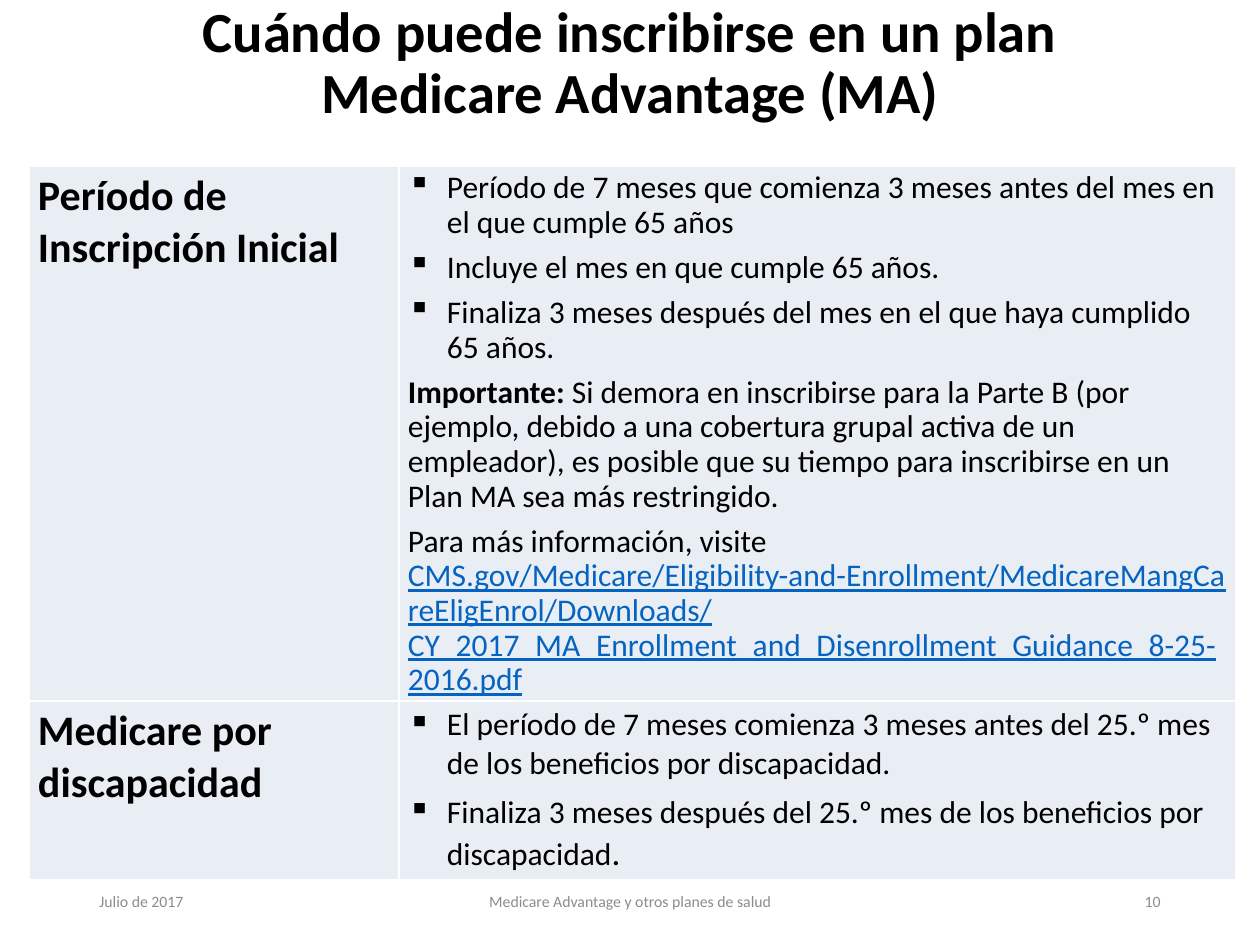
from pptx import Presentation
from pptx import util as u
from pptx.dml.color import RGBColor
from pptx.enum import text
from pptx.oxml.ns import qn
from lxml import etree

BLACK = RGBColor(0x00, 0x00, 0x00)
WHITE = RGBColor(0xFF, 0xFF, 0xFF)
GRAY = RGBColor(0x8C, 0x8C, 0x8C)
LINK = RGBColor(0x05, 0x63, 0xC1)
CELL = RGBColor(0xE9, 0xED, 0xF4)
FONT = "Calibri"
LEFT, CENTER, RIGHT = text.PP_ALIGN.LEFT, text.PP_ALIGN.CENTER, text.PP_ALIGN.RIGHT


def px(n):
    return u.Emu(round(n * 914400 / 126))


def add_run(p, content, size=18, color=BLACK, bold=False, underline=False):
    r = p.add_run()
    r.text = content
    f = r.font
    f.name, f.size, f.bold, f.underline = FONT, u.Pt(size), bold, underline
    f.color.rgb = color


def add_bullet(p, char="▪", indent=39):
    pPr = p._p.get_or_add_pPr()
    pPr.set("marL", str(px(indent)))
    pPr.set("indent", str(-px(indent)))
    etree.SubElement(pPr, qn("a:buChar")).set("char", char)


def fill_paragraph(p, lines, align=LEFT, spacing=1.0, before=0, bullet=False, **fmt):
    p.alignment, p.line_spacing, p.space_before = align, spacing, u.Pt(before)
    if bullet:
        add_bullet(p)
    for i, line in enumerate(lines):
        if i:
            p.add_line_break()
        for content, extra in line:
            add_run(p, content, **{**fmt, **extra})


class Deck:
    def __init__(self, width, height):
        self.prs = Presentation()
        self.prs.slide_width, self.prs.slide_height = px(width), px(height)
        self.s = self.prs.slides.add_slide(self.prs.slide_layouts[6])

    def textbox(self, x, y, w, h, *lines, **fmt):
        tf = self.s.shapes.add_textbox(px(x), px(y), px(w), px(h)).text_frame
        tf.word_wrap = True
        tf.vertical_anchor = text.MSO_ANCHOR.MIDDLE
        fill_paragraph(tf.paragraphs[0], [[(line, {})] for line in lines], **fmt)

    def table(self, x, y, cols, rows, cells):
        shape = self.s.shapes.add_table(len(rows), len(cols), px(x), px(y),
                                        px(sum(cols)), px(sum(rows)))
        tbl = shape.table
        tbl.first_row = tbl.horz_banding = False
        for col, w in zip(tbl.columns, cols):
            col.width = px(w)
        for row, h in zip(tbl.rows, rows):
            row.height = px(h)
        for i, row in enumerate(cells):
            for j, paragraphs in enumerate(row):
                self.cell(tbl.cell(i, j), paragraphs)

    def cell(self, cell, paragraphs):
        cell.margin_left = cell.margin_right = px(9)
        cell.margin_top = cell.margin_bottom = px(5)
        self.borders(cell)
        cell.fill.solid()
        cell.fill.fore_color.rgb = CELL
        tf = cell.text_frame
        for i, (lines, fmt) in enumerate(paragraphs):
            p = tf.add_paragraph() if i else tf.paragraphs[0]
            fill_paragraph(p, lines, before=6 if i else 0, **fmt)

    def borders(self, cell):
        tcPr = cell._tc.get_or_add_tcPr()
        for side in ("lnL", "lnR", "lnT", "lnB"):
            ln = etree.SubElement(tcPr, qn(f"a:{side}"), w=str(u.Pt(1)))
            fill = etree.SubElement(ln, qn("a:solidFill"))
            etree.SubElement(fill, qn("a:srgbClr"), val=str(WHITE))


def heading(content):
    return [([[(content, {})]], {"size": 24, "bold": True})]


def item(*runs, spacing=1.0):
    return [list(runs)], {"bullet": True, "spacing": spacing}


def main():
    deck = Deck(1260, 945)
    deck.textbox(0, -5, 1260, 140, "Cuándo puede inscribirse en un plan",
                 "Medicare Advantage (MA)", align=CENTER, spacing=0.9, size=32.4, bold=True)

    initial = [item((t, {}), spacing=0.9) for t in (
        "Período de 7 meses que comienza 3 meses antes del mes en el que cumple 65 años",
        "Incluye el mes en que cumple 65 años.",
        "Finaliza 3 meses después del mes en el que haya cumplido 65 años.",
    )]
    initial.append(([[
        ("Importante:", {"bold": True}),
        (" Si demora en inscribirse para la Parte B (por ejemplo, debido a una cobertura "
         "grupal activa de un empleador), es posible que su tiempo para inscribirse en un "
         "Plan MA sea más restringido.", {}),
    ]], {"spacing": 0.9}))
    initial.append(([
        [("Para más información, visite", {})],
        [("CMS.gov/Medicare/Eligibility-and-Enrollment/MedicareMangCareEligEnrol/Downloads/"
          "CY_2017_MA_Enrollment_and_Disenrollment_Guidance_8-25-2016.pdf",
          {"color": LINK, "underline": True})],
    ], {"spacing": 0.9}))
    disability = [
        item(("El período de 7 meses comienza 3 meses antes del 25.º mes "
              "de los beneficios por discapacidad.", {})),
        item(("Finaliza 3 meses después del 25.º mes de los beneficios por discapacidad", {}),
             (".", {"size": 20})),
    ]
    deck.table(29, 166, [370, 837], [535, 179], [
        [heading("Período de Inscripción Inicial"), initial],
        [heading("Medicare por discapacidad"), disability],
    ])

    for x, w, content, align in (
        (87, 284, "Julio de 2017", LEFT),
        (417, 426, "Medicare Advantage y otros planes de salud", CENTER),
        (889, 284, "10", RIGHT),
    ):
        deck.textbox(x, 876, w, 50, content, align=align, size=9, color=GRAY)
    deck.prs.save("out.pptx")


if __name__ == "__main__":
    main()
